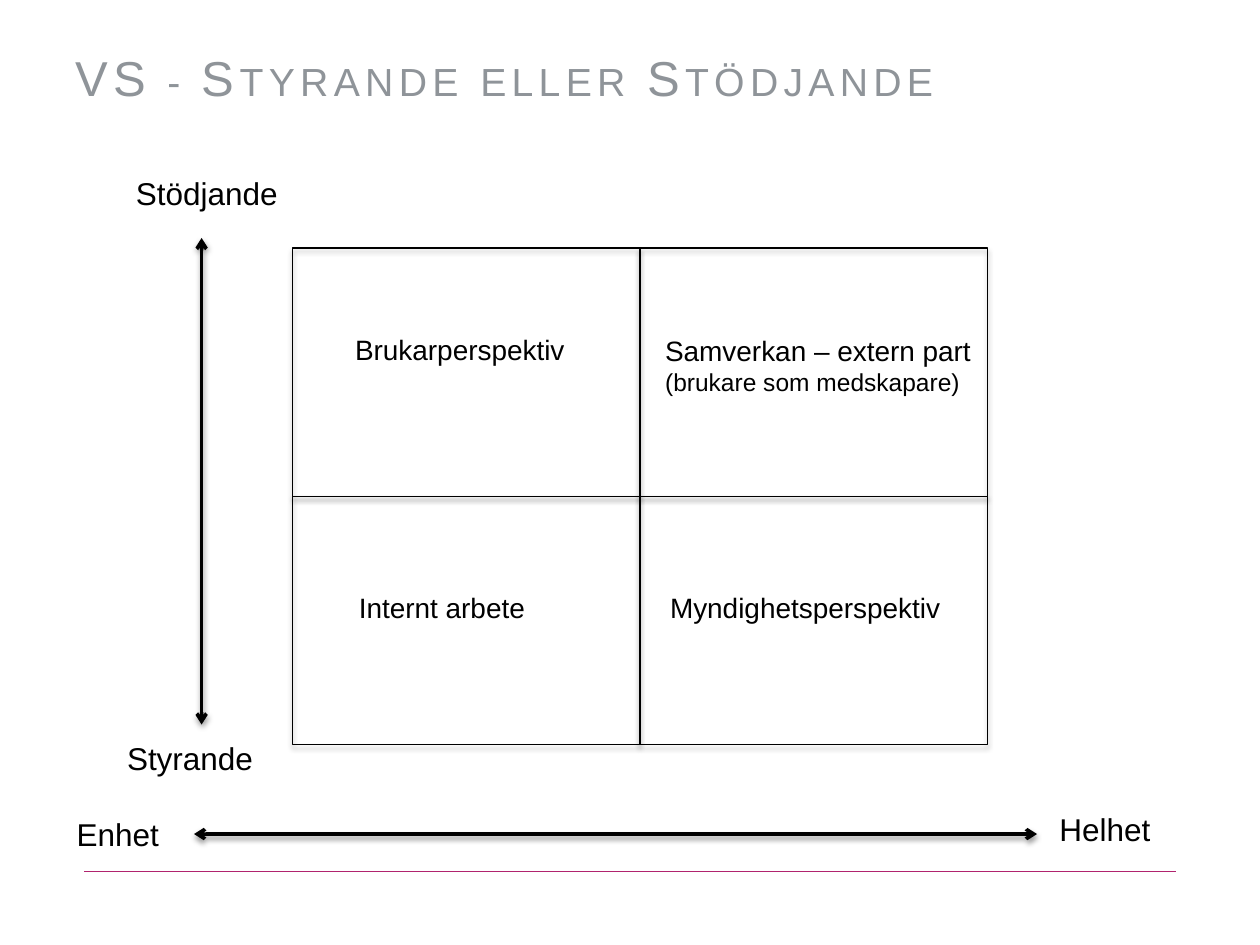
from lxml.etree import SubElement
from pptx import Presentation
from pptx.dml.color import RGBColor
from pptx.enum.shapes import MSO_CONNECTOR, MSO_SHAPE
from pptx.enum.text import MSO_AUTO_SIZE
from pptx.oxml.ns import qn
from pptx.util import Pt

HUES = {"ink": "000000", "title": "8F9499", "rule": "B1236E"}

deck = Presentation()
deck.slide_width, deck.slide_height = Pt(720), Pt(540)
slide = deck.slides.add_slide(deck.slide_layouts[6])
shapes = slide.shapes


def write(text, box, sizes=(18,), hue="ink", wrap=False, caps=False, top=3.6):
    """Add a text box; each line of text takes its own size."""
    area = shapes.add_textbox(*map(Pt, box))
    frame = area.text_frame
    frame.text = text
    frame.word_wrap = wrap
    frame.margin_top = Pt(top)
    frame.auto_size = MSO_AUTO_SIZE.NONE if wrap else MSO_AUTO_SIZE.SHAPE_TO_FIT_TEXT
    for para, size in zip(frame.paragraphs, sizes):
        font = para.runs[0].font
        font.name, font.size = "Arial", Pt(size)
        font.color.rgb = RGBColor.from_string(HUES[hue])
        if caps:
            props = para.runs[0]._r.get_or_add_rPr()
            props.set("cap", "small")
            props.set("spc", "300")


def outline(shape, hue, width, alpha=0, drop=0):
    """Set the line, and a soft shadow straight below when alpha is given."""
    shape.line.color.rgb = RGBColor.from_string(HUES[hue])
    shape.line.width = Pt(width)
    effects = SubElement(shape._element.spPr, qn("a:effectLst"))
    if alpha:
        shade = SubElement(effects, qn("a:outerShdw"), blurRad=str(Pt(3.1)),
                           dist=str(Pt(drop)), dir="5400000", rotWithShape="0")
        tint = SubElement(shade, qn("a:srgbClr"), val=HUES["ink"])
        SubElement(tint, qn("a:alpha"), val=str(alpha * 1000))


# Footer rule and title
rule = shapes.add_connector(MSO_CONNECTOR.STRAIGHT, Pt(48.2), Pt(498), Pt(672.2), Pt(498))
outline(rule, "rule", 0.75)
write("VS - Styrande eller Stödjande", (36, 21, 648, 90), (28,), "title",
      wrap=True, caps=True, top=6)

# Axes
for ends in [(110.9, 476.6, 592.6, 476.6), (115.2, 136, 115.2, 414)]:
    axis = shapes.add_connector(MSO_CONNECTOR.STRAIGHT, *map(Pt, ends))
    outline(axis, "ink", 2, 38, 1.6)
    for end in ("a:headEnd", "a:tailEnd"):
        SubElement(axis.line._get_or_add_ln(), qn(end), type="arrow")

# Two by two grid
LEFT, TOP, WIDE, HIGH = 167, 141.8, 198.7, 141.8
for col, row in [(0, 0), (0, 1), (1, 1), (1, 0)]:
    cell = shapes.add_shape(MSO_SHAPE.RECTANGLE, Pt(LEFT + col * WIDE),
                            Pt(TOP + row * HIGH), Pt(WIDE), Pt(HIGH))
    cell.fill.background()
    outline(cell, "ink", 0.75, 35, 1.8)

# Axis labels
write("Stödjande", (70.6, 95.8, 96.5, 29))
write("Styrande", (65.5, 419, 87.1, 29))
write("Enhet", (36.7, 462.2, 61.9, 29))
write("Helhet", (598.3, 459.4, 67, 29))

# Cell labels
write("Brukarperspektiv", (195.8, 186.5, 136.1, 46), (16,))
write("Myndighetsperspektiv", (375.8, 334, 171.4, 26.6), (16,))
write("Internt arbete", (198, 334, 110.9, 26.6), (16,))
write("Samverkan – extern part\n(brukare som medskapare)", (373, 187.2, 191.5, 44), (16, 14))

deck.save("out.pptx")
